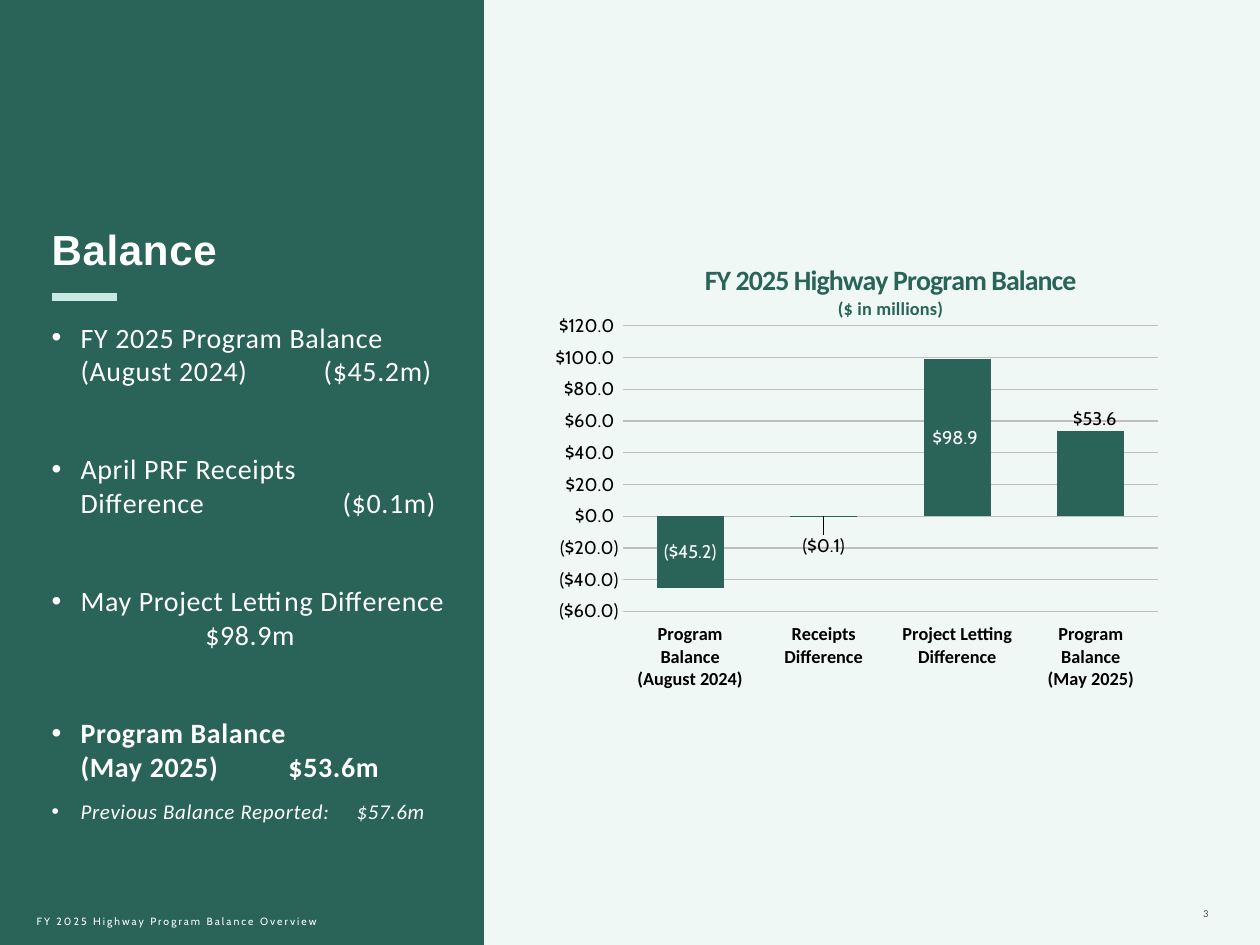
from lxml import etree
from pptx import Presentation
from pptx.chart.data import CategoryChartData
from pptx.dml.color import RGBColor
from pptx.enum import chart as ch, shapes, text
from pptx.oxml import parse_xml
from pptx.oxml.ns import nsdecls, qn
from pptx.util import Inches, Pt

GREEN = RGBColor(0x2A, 0x63, 0x57)
MINT = RGBColor(0xCB, 0xE9, 0xE3)
PALE = RGBColor(0xF0, 0xF8, 0xF6)
GRID = RGBColor(0xBF, 0xBF, 0xBF)
GREY = RGBColor(0x4D, 0x4D, 0x4F)
WHITE = RGBColor(255, 255, 255)
BLACK = RGBColor(0, 0, 0)
MONEY = '"$"#,##0.0_);\\("$"#,##0.0\\)'

# Lines of the label, amount, tab stop, size, space before, bold, italic
ITEMS = [
    (["FY 2025 Program Balance", "(August 2024)"], "($45.2m)", 2.16, 16, 0, False, False),
    (["April PRF Receipts", "Difference"], "($0.1m)", 2.31, 16, 37, False, False),
    (["May Project Letting Difference", ""], "$98.9m", 1.22, 16, 37, False, False),
    (["Program Balance", "(May 2025)"], "$53.6m", 1.88, 16, 37, True, False),
    (["Previous Balance Reported:"], "$57.6m", 2.42, 12, 9, False, True),
]
BARS = [
    ("Program Balance\n(August 2024)", -45.2),
    ("Receipts\nDifference", -0.1),
    ("Project Letting\nDifference", 98.9),
    ("Program Balance\n(May 2025)", 53.6),
]
# Bars with a label outside, and its shift
OUTSIDE = {1: (0, 0.03), 3: (0.01, 0.01)}


def style(font, name, size, color, bold=False, italic=False):
    font.name, font.size = name, Pt(size)
    font.bold, font.italic = bold, italic
    font.color.rgb = color


def add_run(para, words, *look, gap=0.4):
    run = para.add_run()
    run.text = words
    style(run.font, *look)
    run.font._element.set("spc", str(round(gap * 100)))


def set_frame(shape, box, anchor=text.MSO_ANCHOR.TOP, pad=0):
    shape.left, shape.top, shape.width, shape.height = map(Inches, box)
    frame = shape.text_frame
    frame.word_wrap = True
    frame.auto_size = text.MSO_AUTO_SIZE.NONE
    frame.vertical_anchor = anchor
    frame.margin_left = frame.margin_right = 0
    frame.margin_top = frame.margin_bottom = Inches(pad)
    return frame


def add_box(slide, box, *opts):
    return set_frame(slide.shapes.add_textbox(0, 0, 0, 0), box, *opts)


def add_panel(slide):
    panel = slide.shapes.add_shape(shapes.MSO_SHAPE.RECTANGLE, 0, 0, Inches(3.84), Inches(7.5))
    panel.shadow.inherit = False
    panel.fill.solid()
    panel.fill.fore_color.rgb = GREEN
    panel.line.fill.background()
    # Keep the panel behind the title
    tree = slide.shapes._spTree
    tree.remove(panel._element)
    tree.insert(2, panel._element)


def add_title(slide):
    frame = set_frame(slide.shapes.title, (0.41, 1.77, 3.12, 0.5))
    para = frame.paragraphs[0]
    para.alignment = text.PP_ALIGN.LEFT
    add_run(para, "Balance", "Arial", 24, WHITE, True)


def add_rule(slide):
    y = Inches(2.36)
    rule = slide.shapes.add_connector(
        shapes.MSO_CONNECTOR.STRAIGHT, Inches(0.41), y, Inches(0.93), y)
    rule.line.color.rgb = MINT
    rule.line.width = Pt(4.5)
    etree.SubElement(rule._element.spPr, qn("a:effectLst"))


def set_bullet(para, stop):
    props = para._p.get_or_add_pPr()
    props.set("marL", str(Inches(0.23)))
    props.set("indent", str(-Inches(0.23)))
    etree.SubElement(props, qn("a:buFont")).set("typeface", "Arial")
    etree.SubElement(props, qn("a:buChar")).set("char", "•")
    tab = etree.SubElement(etree.SubElement(props, qn("a:tabLst")), qn("a:tab"))
    tab.set("pos", str(Inches(stop)))
    tab.set("algn", "l")


def add_list(slide):
    frame = add_box(slide, (0.41, 2.54, 3.3, 4.05))
    for num, (lines, total, stop, size, space, bold, slant) in enumerate(ITEMS):
        para = frame.add_paragraph() if num else frame.paragraphs[0]
        set_bullet(para, stop)
        para.space_before = Pt(space)
        look = ("Calibri", size, WHITE, bold, slant)
        for line in lines[:-1]:
            add_run(para, line, *look)
            para.add_line_break()
        add_run(para, f"{lines[-1]}\t{total}", *look)


def place(x, y, w=None, h=None, inner=False, mode="edge"):
    """Build a manual chart layout from fractions of the chart."""
    parts = '<c:layoutTarget val="inner"/>' if inner else ""
    if mode == "edge":
        parts += '<c:xMode val="edge"/><c:yMode val="edge"/>'
    for key, val in zip("xywh", (x, y, w, h)):
        if val is not None:
            parts += f'<c:{key} val="{val}"/>'
    return parse_xml(f'<c:layout {nsdecls("c")}><c:manualLayout>{parts}'
                     '</c:manualLayout></c:layout>')


def set_layout(parent, layout, spot):
    for old in parent.findall(qn("c:layout")):
        parent.remove(old)
    parent.insert(spot, layout)


def set_axes(chart):
    cat, val = chart.category_axis, chart.value_axis
    for axis in (cat, val):
        axis.major_tick_mark = axis.minor_tick_mark = ch.XL_TICK_MARK.NONE
    cat.tick_label_position = ch.XL_TICK_LABEL_POSITION.LOW
    style(cat.tick_labels.font, "Calibri", 10.5, BLACK, True)
    style(val.tick_labels.font, "Cabin", 10.5, BLACK)
    val.tick_labels.number_format = MONEY
    val.tick_labels.number_format_is_linked = False
    val.minimum_scale, val.maximum_scale, val.major_unit = -60, 120, 20
    val.format.line.fill.background()
    for line in (cat.format.line, val.major_gridlines.format.line):
        line.color.rgb = GRID
        line.width = Pt(0.75)


def set_labels(series):
    labels = series.data_labels
    labels.show_value = True
    labels.position = ch.XL_LABEL_POSITION.CENTER
    labels.number_format = MONEY
    labels.number_format_is_linked = False
    style(labels.font, "Cabin", 10.5, WHITE)
    # Short bars carry their labels outside
    for idx in OUTSIDE:
        label = series.points[idx].data_label
        style(label.font, "Cabin", 10.5, BLACK)
        label.position = ch.XL_LABEL_POSITION.OUTSIDE_END
    for item, shift in zip(labels._element.findall(qn("c:dLbl")), OUTSIDE.values()):
        set_layout(item, place(*shift, mode="factor"), 1)
    # No leader lines to shifted labels
    labels._element.append(parse_xml(
        f'<c:extLst {nsdecls("c")}><c:ext uri="{{CE6537A1-D6FC-4f65-9D91-7224C49458BB}}" '
        'xmlns:c15="http://schemas.microsoft.com/office/drawing/2012/chart">'
        '<c15:showLeaderLines val="0"/></c:ext></c:extLst>'))


def add_chart(slide):
    data = CategoryChartData(number_format=MONEY)
    data.categories = [name for name, _ in BARS]
    data.add_series("Series 1", [val for _, val in BARS])
    box = map(Inches, (4.41, 2.05, 4.92, 3.5))
    chart = slide.shapes.add_chart(ch.XL_CHART_TYPE.COLUMN_CLUSTERED, *box, data).chart
    style(chart.font, "Cabin", 10, BLACK)
    chart.has_legend = False
    # Two-line heading
    frame = chart.chart_title.text_frame
    add_run(frame.paragraphs[0], "FY 2025 Highway Program Balance",
            "Calibri", 16, GREEN, True, gap=-0.4)
    add_run(frame.add_paragraph(), "($ in millions)", "Calibri", 10.5, GREEN, True, gap=0.1)
    set_layout(chart.chart_title._element, place(0.23, 0), 1)
    chart.chart_title.include_in_layout = False
    area = chart._chartSpace.chart.plotArea
    set_layout(area, place(0.104, 0.153, 0.867, 0.648, inner=True), 0)
    # Bars
    plot = chart.plots[0]
    plot.gap_width, plot.overlap, plot.vary_by_categories = 100, -24, False
    series = plot.series[0]
    series.format.fill.solid()
    series.format.fill.fore_color.rgb = GREEN
    series.invert_if_negative = False
    set_axes(chart)
    set_labels(series)


def add_foot(slide):
    frame = add_box(slide, (0.29, 7.16, 2.61, 0.3), text.MSO_ANCHOR.MIDDLE, 0.05)
    add_run(frame.paragraphs[0], "FY 2025 Highway Program Balance Overview",
            "Cabin", 6, WHITE, gap=1.15)
    frame = add_box(slide, (8.62, 6.95, 0.97, 0.4), text.MSO_ANCHOR.BOTTOM, 0.05)
    frame.paragraphs[0].alignment = text.PP_ALIGN.RIGHT
    add_run(frame.paragraphs[0], "3", "Calibri", 6, GREY, gap=1.1)


def main():
    deck = Presentation()
    deck.slide_width, deck.slide_height = Inches(10), Inches(7.5)
    slide = deck.slides.add_slide(deck.slide_layouts[5])
    slide.background.fill.solid()
    slide.background.fill.fore_color.rgb = PALE
    add_panel(slide)
    add_title(slide)
    add_rule(slide)
    add_list(slide)
    add_chart(slide)
    add_foot(slide)
    deck.save("out.pptx")


if __name__ == "__main__":
    main()
